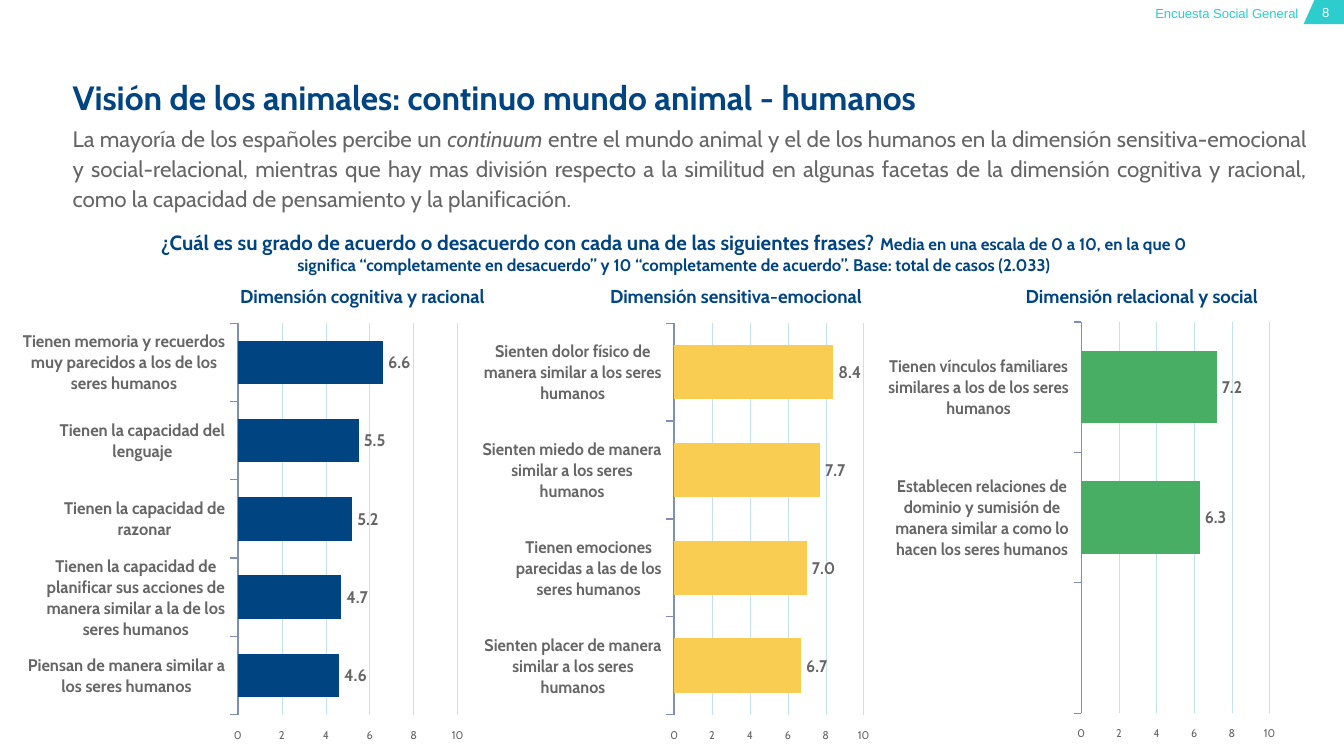
from lxml import etree
from pptx import Presentation
from pptx.chart.data import CategoryChartData
from pptx.dml.color import RGBColor
from pptx.enum.chart import XL_CHART_TYPE, XL_LABEL_POSITION, XL_TICK_MARK
from pptx.enum.text import MSO_ANCHOR, MSO_AUTO_SIZE, PP_ALIGN
from pptx.oxml.ns import qn
from pptx.util import Inches, Pt

BAR_CLUSTERED = XL_CHART_TYPE.BAR_CLUSTERED
OUTSIDE_END = XL_LABEL_POSITION.OUTSIDE_END
TICK_OUT, TICK_NONE = XL_TICK_MARK.OUTSIDE, XL_TICK_MARK.NONE
TOP = MSO_ANCHOR.TOP
NO_AUTOFIT = MSO_AUTO_SIZE.NONE
LEFT, CENTER, RIGHT, JUSTIFY = PP_ALIGN.LEFT, PP_ALIGN.CENTER, PP_ALIGN.RIGHT, PP_ALIGN.JUSTIFY

NAVY = RGBColor(0x00, 0x44, 0x81)
YELLOW = RGBColor(0xF8, 0xCD, 0x51)
GREEN = RGBColor(0x48, 0xAE, 0x64)
TEAL = RGBColor(0x2D, 0xCC, 0xCD)
GRAY = RGBColor(0x66, 0x66, 0x66)
WHITE = RGBColor(0xFF, 0xFF, 0xFF)
GRID_BLUE = RGBColor(0xC5, 0xE1, 0xF8)
AXIS_BLUE = RGBColor(0x7F, 0x8F, 0xB5)
FONT = "Cabin"
PLOT_LAYOUT = {"x": 0.508, "y": 0.03, "w": 0.51, "h": 0.697}

TITLE = "Visión de los animales: continuo mundo animal - humanos"
SUMMARY = [
    ("La mayoría de los españoles percibe un ", False),
    ("continuum", True),
    (" entre el mundo animal y el de los humanos en la dimensión sensitiva-emocional "
     "y social-relacional, mientras que hay mas división respecto a la similitud en algunas "
     "facetas de la dimensión cognitiva y racional, como la capacidad de pensamiento "
     "y la planificación. ", False),
]
QUESTION = [
    ("¿Cuál es su grado de acuerdo o desacuerdo con cada una de las siguientes frases? ", 11),
    ("Media en una escala de 0 a 10, en la que 0 significa “completamente en desacuerdo” "
     "y 10 “completamente de acuerdo”. Base: total de casos (2.033)", 9),
]
# heading, heading left, chart box, bar colour, statements from bottom to top
PANELS = [
    ("Dimensión cognitiva y racional", 1.45, (0.17, 2.28, 3.28, 4.18), NAVY, [
        ("Piensan de manera similar a los seres humanos", 4.6),
        ("Tienen la capacidad de planificar sus acciones de manera similar "
         "a la de los seres humanos", 4.7),
        ("Tienen la capacidad de razonar", 5.2),
        ("Tienen la capacidad del lenguaje", 5.5),
        ("Tienen memoria y recuerdos muy parecidos a los de los seres humanos", 6.6),
    ]),
    ("Dimensión sensitiva-emocional", 4.23, (3.59, 2.28, 2.88, 4.18), YELLOW, [
        ("Sienten placer de manera similar a los seres humanos", 6.7),
        ("Tienen emociones parecidas a las de los seres humanos", 7.0),
        ("Sienten miedo de manera similar a los seres humanos", 7.7),
        ("Sienten dolor físico de manera similar a los seres humanos", 8.4),
    ]),
    ("Dimensión relacional y social", 7.25, (6.61, 2.27, 2.88, 4.18), GREEN, [
        ("", None),
        ("Establecen relaciones de dominio y sumisión de manera similar "
         "a como lo hacen los seres humanos", 6.3),
        ("Tienen vínculos familiares similares a los de los seres humanos", 7.2),
    ]),
]


def to_inches(box):
    return [Inches(length) for length in box]


def style_font(font, size, color, bold=False, name=FONT):
    font.size, font.bold, font.name = Pt(size), bold, name
    font.color.rgb = color


def prepare_frame(shape, alignment):
    """Clear insets, wrap from the top and return the first paragraph."""
    frame = shape.text_frame
    frame.word_wrap = True
    frame.auto_size = NO_AUTOFIT
    frame.vertical_anchor = TOP
    frame.margin_left = frame.margin_top = frame.margin_right = frame.margin_bottom = 0
    paragraph = frame.paragraphs[0]
    paragraph.alignment = alignment
    return paragraph


def add_run(paragraph, text, size, color, bold=False, name=FONT):
    run = paragraph.add_run()
    run.text = text
    style_font(run.font, size, color, bold, name)
    return run


def add_text_box(slide, box, alignment):
    return prepare_frame(slide.shapes.add_textbox(*to_inches(box)), alignment)


def add_page_header(slide, left, top):
    """Survey name and page number on a slanted tab."""
    builder = slide.shapes.build_freeform(Inches(left + 0.08), Inches(top), scale=1.0)
    corners = [(left + 0.3, top), (left + 0.3, top + 0.18), (left, top + 0.18)]
    builder.add_line_segments([to_inches(corner) for corner in corners], close=True)
    tab = builder.convert_to_shape()
    tab.shadow.inherit = False
    tab.fill.solid()
    tab.fill.fore_color.rgb = TEAL
    tab.line.fill.background()
    number = add_text_box(slide, (left + 0.05, top + 0.03, 0.23, 0.12), CENTER)
    add_run(number, "8", 7, WHITE, name="Arial")
    survey = add_text_box(slide, (left - 2.86, top + 0.04, 2.82, 0.12), RIGHT)
    add_run(survey, "Encuesta Social General", 7, TEAL, name="Arial")


def add_introduction(slide, left, top):
    """Title, summary and survey question."""
    title = slide.shapes.title
    title.left, title.top, title.width, title.height = to_inches((left, top, 8.81, 0.37))
    add_run(prepare_frame(title, LEFT), TITLE, 18, NAVY, bold=True)

    summary = add_text_box(slide, (left, top + 0.34, 9.19, 0.67), JUSTIFY)
    summary.line_spacing = Pt(16)
    summary.space_before = summary.space_after = Pt(6)
    for text, italic in SUMMARY:
        add_run(summary, text, 12, GRAY).font.italic = italic

    question = add_text_box(slide, (left + 0.63, top + 1.14, 7.68, 0.55), CENTER)
    for text, size in QUESTION:
        add_run(question, text, size, NAVY, bold=True)


def set_plot_layout(chart):
    plot_area = chart.plots[0]._element.getparent()
    for old_layout in plot_area.findall(qn("c:layout")):
        plot_area.remove(old_layout)
    layout = etree.Element(qn("c:layout"))
    manual = etree.SubElement(layout, qn("c:manualLayout"))
    settings = {"layoutTarget": "inner", "xMode": "edge", "yMode": "edge", **PLOT_LAYOUT}
    for tag, value in settings.items():
        etree.SubElement(manual, qn(f"c:{tag}")).set("val", str(value))
    plot_area.insert(0, layout)


def style_axes(chart):
    category_axis, value_axis = chart.category_axis, chart.value_axis
    for axis, size, bold in ((category_axis, 9, True), (value_axis, 6, False)):
        axis.major_tick_mark, axis.minor_tick_mark = TICK_OUT, TICK_NONE
        style_font(axis.tick_labels.font, size, GRAY, bold)
    category_axis.has_major_gridlines = False
    category_axis.format.line.color.rgb = AXIS_BLUE
    category_axis.format.line.width = Pt(0.75)
    value_axis.minimum_scale, value_axis.maximum_scale, value_axis.major_unit = 0, 10, 2
    value_axis.tick_labels.number_format = "#,##0"
    value_axis.tick_labels.number_format_is_linked = False
    value_axis.format.line.fill.background()
    value_axis.has_major_gridlines = True
    gridline = value_axis.major_gridlines.format.line
    gridline.color.rgb = GRID_BLUE
    gridline.width = Pt(0.25)


def add_panel(slide, heading, heading_left, box, color, statements):
    """Bar chart of mean agreement under its heading."""
    data = CategoryChartData(number_format="#,##0.0")
    data.categories = [statement for statement, mean in statements]
    data.add_series("Series 1", [mean for statement, mean in statements])
    chart = slide.shapes.add_chart(BAR_CLUSTERED, *to_inches(box), data).chart
    chart.has_legend = chart.has_title = False
    style_font(chart.font, 9, GRAY, bold=True)
    set_plot_layout(chart)
    style_axes(chart)

    plot = chart.plots[0]
    plot.gap_width = 80
    plot.vary_by_categories = False
    bars = plot.series[0].format
    bars.fill.solid()
    bars.fill.fore_color.rgb = color
    bars.line.fill.background()
    plot.has_data_labels = True
    labels = plot.data_labels
    labels.show_value = True
    labels.position = OUTSIDE_END
    labels.number_format, labels.number_format_is_linked = "#,##0.0", False
    style_font(labels.font, 9, GRAY, bold=True)

    paragraph = add_text_box(slide, (heading_left, 2.12, 2.49, 0.16), CENTER)
    add_run(paragraph, heading, 10, NAVY, bold=True)


def main():
    presentation = Presentation()
    presentation.slide_width = Inches(10)
    presentation.slide_height = presentation.slide_width * 9 // 16
    slide = presentation.slides.add_slide(presentation.slide_layouts[5])
    add_page_header(slide, 9.7, 0)
    add_introduction(slide, 0.54, 0.57)
    for panel in PANELS:
        add_panel(slide, *panel)
    presentation.save("out.pptx")


if __name__ == "__main__":
    main()
